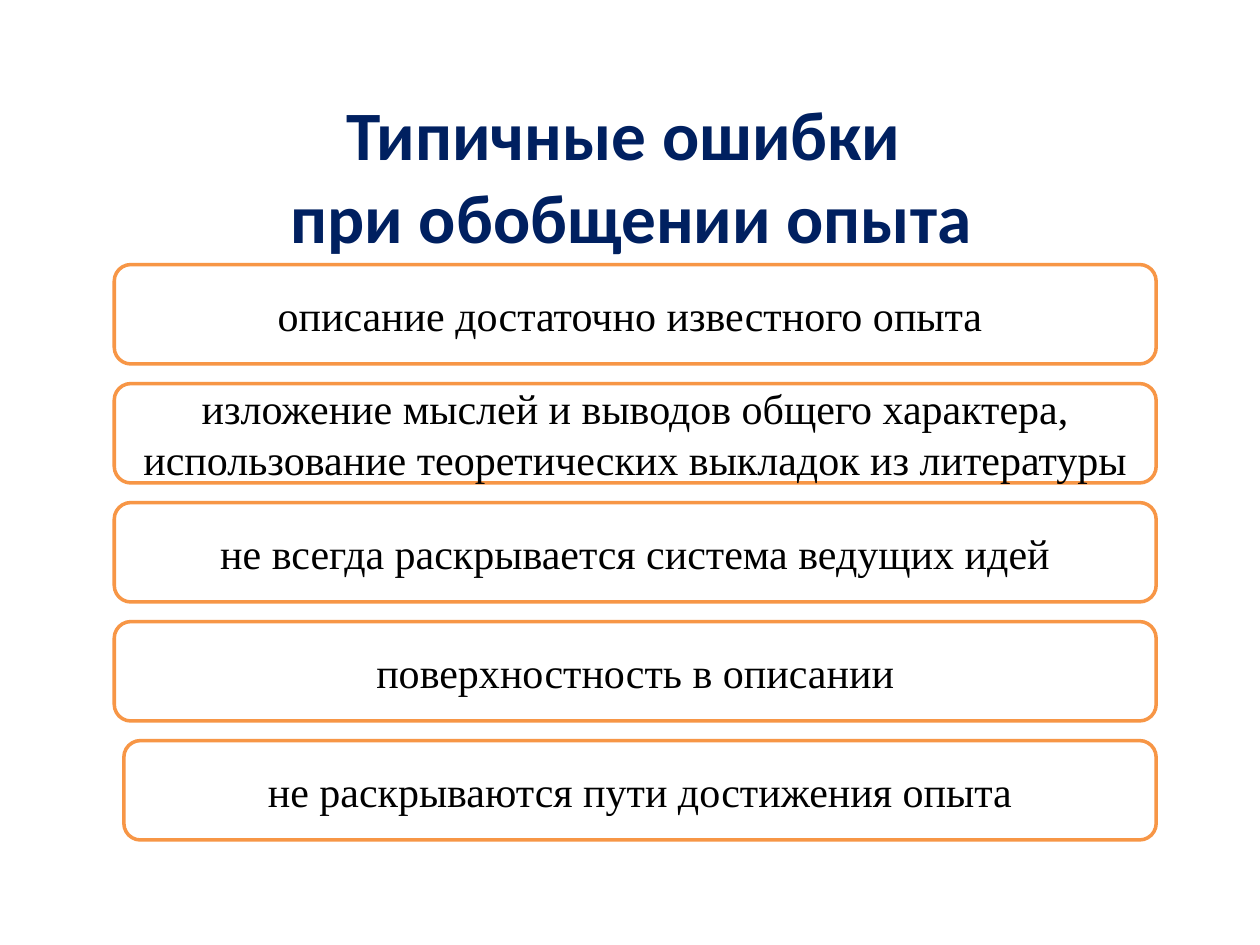
from pptx import Presentation
from pptx.dml.color import RGBColor
from pptx.enum.shapes import MSO_SHAPE
from pptx.enum.text import MSO_ANCHOR, MSO_AUTO_SIZE, PP_ALIGN
from pptx.util import Pt

ROUNDED = MSO_SHAPE.ROUNDED_RECTANGLE
MIDDLE = MSO_ANCHOR.MIDDLE
NO_AUTOFIT = MSO_AUTO_SIZE.NONE
CENTER = PP_ALIGN.CENTER
TITLE_ONLY = 5

NAVY, ORANGE, WHITE, BLACK = "002060", "F79646", "FFFFFF", "000000"

TITLE = "Типичные ошибки \vпри обобщении опыта"
MISTAKES = [
    "описание достаточно известного опыта ",
    "изложение мыслей и выводов общего характера, "
    "использование теоретических выкладок из литературы",
    "не всегда раскрывается система ведущих идей",
    "поверхностность в описании",
    "не раскрываются пути достижения опыта",
]


def color(value):
    return RGBColor.from_string(value)


def write_centered(shape, text, font_name, size, text_color, bold=False):
    frame = shape.text_frame
    frame.text = text
    frame.word_wrap = True
    frame.auto_size = NO_AUTOFIT
    frame.vertical_anchor = MIDDLE
    paragraph = frame.paragraphs[0]
    paragraph.alignment = CENTER
    font = paragraph.font
    font.name = font_name
    font.size = Pt(size)
    font.bold = bold
    font.color.rgb = color(text_color)


def place_title(slide, left, top, width, height):
    title = slide.shapes.title
    title.left, title.top = Pt(left), Pt(top)
    title.width, title.height = Pt(width), Pt(height)
    write_centered(title, TITLE, "Calibri", 39.6, NAVY, bold=True)


def add_mistakes(slide, left, top, width, height, gap=11.2, last_indent=5.5):
    """Stack the boxes evenly; the last one starts a little further right."""
    count = len(MISTAKES)
    box_height = (height - gap * (count - 1)) / count
    for index, text in enumerate(MISTAKES):
        indent = last_indent if index == count - 1 else 0
        box = slide.shapes.add_shape(
            ROUNDED, Pt(left + indent), Pt(top + index * (box_height + gap)),
            Pt(width - indent), Pt(box_height))
        box.shadow.inherit = False
        box.fill.solid()
        box.fill.fore_color.rgb = color(WHITE)
        box.line.color.rgb = color(ORANGE)
        box.line.width = Pt(2)
        write_centered(box, text, "Times New Roman", 24, BLACK)


def main():
    presentation = Presentation()
    presentation.slide_width, presentation.slide_height = Pt(720), Pt(540)
    slide = presentation.slides.add_slide(presentation.slide_layouts[TITLE_ONLY])
    place_title(slide, 36.7, 54.7, 648, 90)
    add_mistakes(slide, 65.3, 151.2, 595.4, 328.8)
    presentation.save("out.pptx")


if __name__ == "__main__":
    main()
